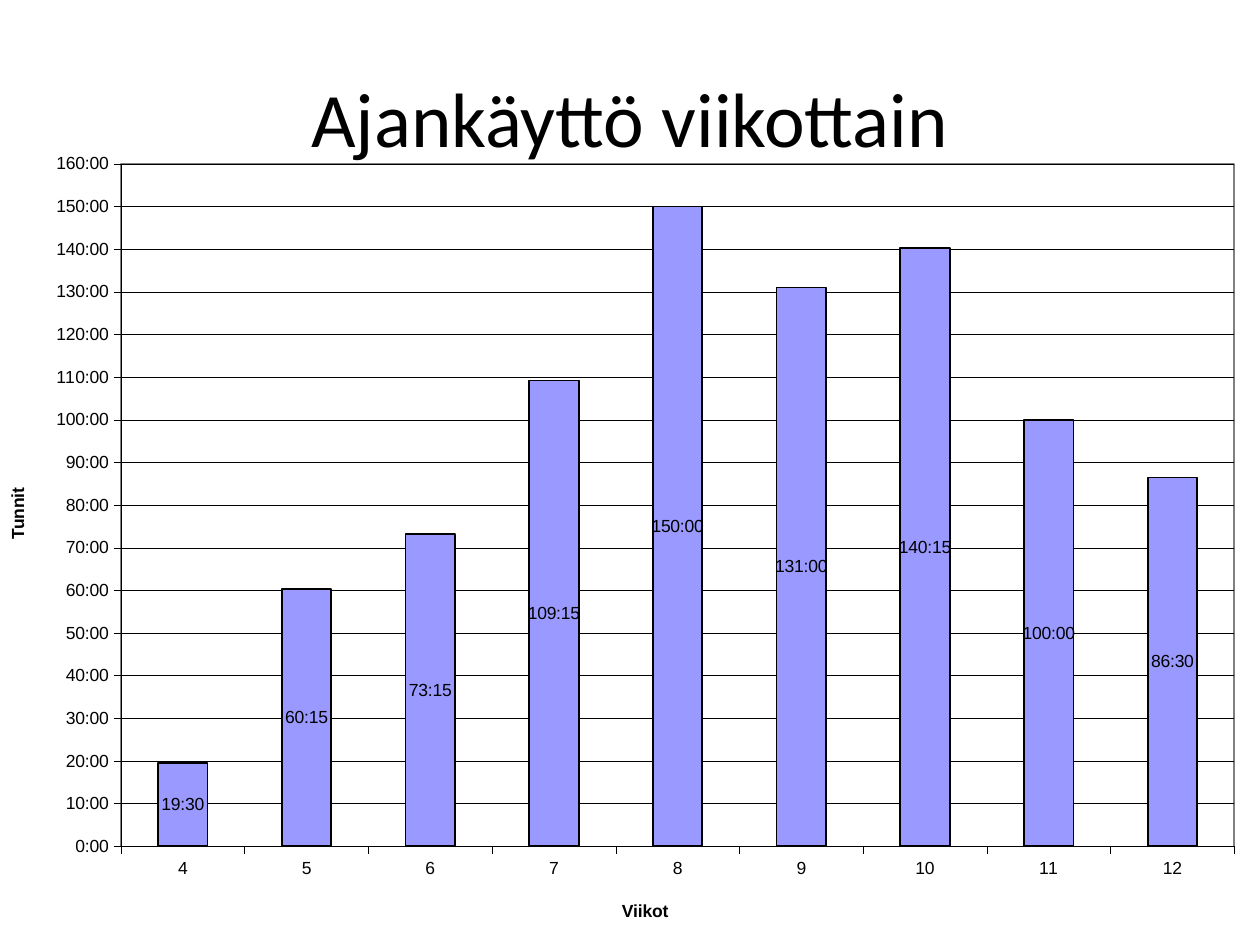
from dataclasses import dataclass

from lxml import etree
from pptx import Presentation
from pptx import util as u
from pptx.chart import data
from pptx.dml import color
from pptx.enum import chart as ch, text
from pptx.oxml import ns

COLORS = {"ink": "000000", "bar": "9999FF", "border": "808080"}
HOURS_FORMAT = "[h]:mm"


@dataclass
class Week:
    number: str
    hours: int
    minutes: int

    @property
    def days(self) -> float:
        return (self.hours + self.minutes / 60) / 24


WEEKS = [
    Week("4", 19, 30),
    Week("5", 60, 15),
    Week("6", 73, 15),
    Week("7", 109, 15),
    Week("8", 150, 0),
    Week("9", 131, 0),
    Week("10", 140, 15),
    Week("11", 100, 0),
    Week("12", 86, 30),
]


def rgb(name: str) -> color.RGBColor:
    return color.RGBColor.from_string(COLORS[name])


def style_font(font, size: float = 10, face: str = "Arial", bold: bool = False) -> None:
    font.size = u.Pt(size)
    font.name = face
    font.bold = bold
    font.color.rgb = rgb("ink")


def write_text(frame, wording: str, **font_format) -> None:
    paragraph = frame.paragraphs[0]
    paragraph.alignment = text.PP_ALIGN.CENTER
    run = paragraph.add_run()
    run.text = wording
    style_font(run.font, **font_format)


def style_line(line, width: float) -> None:
    line.color.rgb = rgb("ink")
    line.width = u.Pt(width)


def place(element, position: int, **fractions: float) -> None:
    for previous in element.findall(ns.qn("c:layout")):
        element.remove(previous)
    layout = etree.Element(ns.qn("c:layout"))
    manual = etree.SubElement(layout, ns.qn("c:manualLayout"))
    settings = {"xMode": "edge", "yMode": "edge", **fractions}
    if "w" in fractions:
        settings = {"layoutTarget": "inner", **settings}
    for tag, value in settings.items():
        etree.SubElement(manual, ns.qn(f"c:{tag}")).set("val", str(value))
    element.insert(position, layout)


def style_axis(axis, wording: str, x: float, y: float) -> None:
    axis.major_tick_mark = ch.XL_TICK_MARK.OUTSIDE
    axis.minor_tick_mark = ch.XL_TICK_MARK.NONE
    style_font(axis.tick_labels.font)
    style_line(axis.format.line, 0.25)
    write_text(axis.axis_title.text_frame, wording, bold=True)
    place(axis.axis_title._element, 1, x=x, y=y)


def add_title(slide) -> None:
    title = slide.shapes.add_textbox(
        u.Inches(0.5), u.Inches(0.3), u.Inches(9), u.Inches(1.25)
    )
    title.text_frame.word_wrap = True
    title.text_frame.vertical_anchor = text.MSO_ANCHOR.MIDDLE
    write_text(title.text_frame, "Ajankäyttö viikottain", size=44, face="Calibri")


def frame_plot(plot_area) -> None:
    properties = etree.SubElement(plot_area, ns.qn("c:spPr"))
    etree.SubElement(properties, ns.qn("a:noFill"))
    border = etree.SubElement(properties, ns.qn("a:ln"), w=str(u.Pt(1)))
    fill = etree.SubElement(border, ns.qn("a:solidFill"))
    etree.SubElement(fill, ns.qn("a:srgbClr"), val=COLORS["border"])


def add_hours_chart(slide, weeks: list[Week]) -> None:
    hours = data.CategoryChartData(number_format=HOURS_FORMAT)
    hours.categories = [week.number for week in weeks]
    hours.add_series("Series 1", [round(week.days, 6) for week in weeks])
    chart = slide.shapes.add_chart(
        ch.XL_CHART_TYPE.COLUMN_STACKED,
        u.Inches(-0.18), u.Inches(1.09), u.Inches(10.18), u.Inches(6.41),
        hours,
    ).chart
    chart.has_legend = False
    chart.has_title = False
    style_font(chart.font)

    style_axis(chart.category_axis, "Viikot", x=0.5, y=0.94)
    hours_axis = chart.value_axis
    style_axis(hours_axis, "Tunnit", x=0.02, y=0.43)
    hours_axis.minimum_scale = 0
    hours_axis.maximum_scale = 160 / 24
    hours_axis.major_unit = 10 / 24
    hours_axis.tick_labels.number_format = HOURS_FORMAT
    hours_axis.tick_labels.number_format_is_linked = False
    style_line(hours_axis.major_gridlines.format.line, 0.25)

    columns = chart.plots[0]
    columns.gap_width = 150
    columns.overlap = 100
    columns.vary_by_categories = False
    weekly = columns.series[0]
    weekly.format.fill.solid()
    weekly.format.fill.fore_color.rgb = rgb("bar")
    style_line(weekly.format.line, 1)
    labels = weekly.data_labels
    labels.show_value = True
    labels.number_format = HOURS_FORMAT
    labels.number_format_is_linked = False
    labels.position = ch.XL_LABEL_POSITION.CENTER
    style_font(labels.font)

    plot_area = chart._chartSpace.chart.plotArea
    place(plot_area, 0, x=0.112, y=0.033, w=0.868, h=0.845)
    frame_plot(plot_area)


def main() -> None:
    deck = Presentation()
    deck.slide_width = u.Inches(10)
    deck.slide_height = u.Inches(7.5)
    slide = deck.slides.add_slide(deck.slide_layouts[6])
    add_title(slide)
    add_hours_chart(slide, WEEKS)
    deck.save("out.pptx")


if __name__ == "__main__":
    main()
